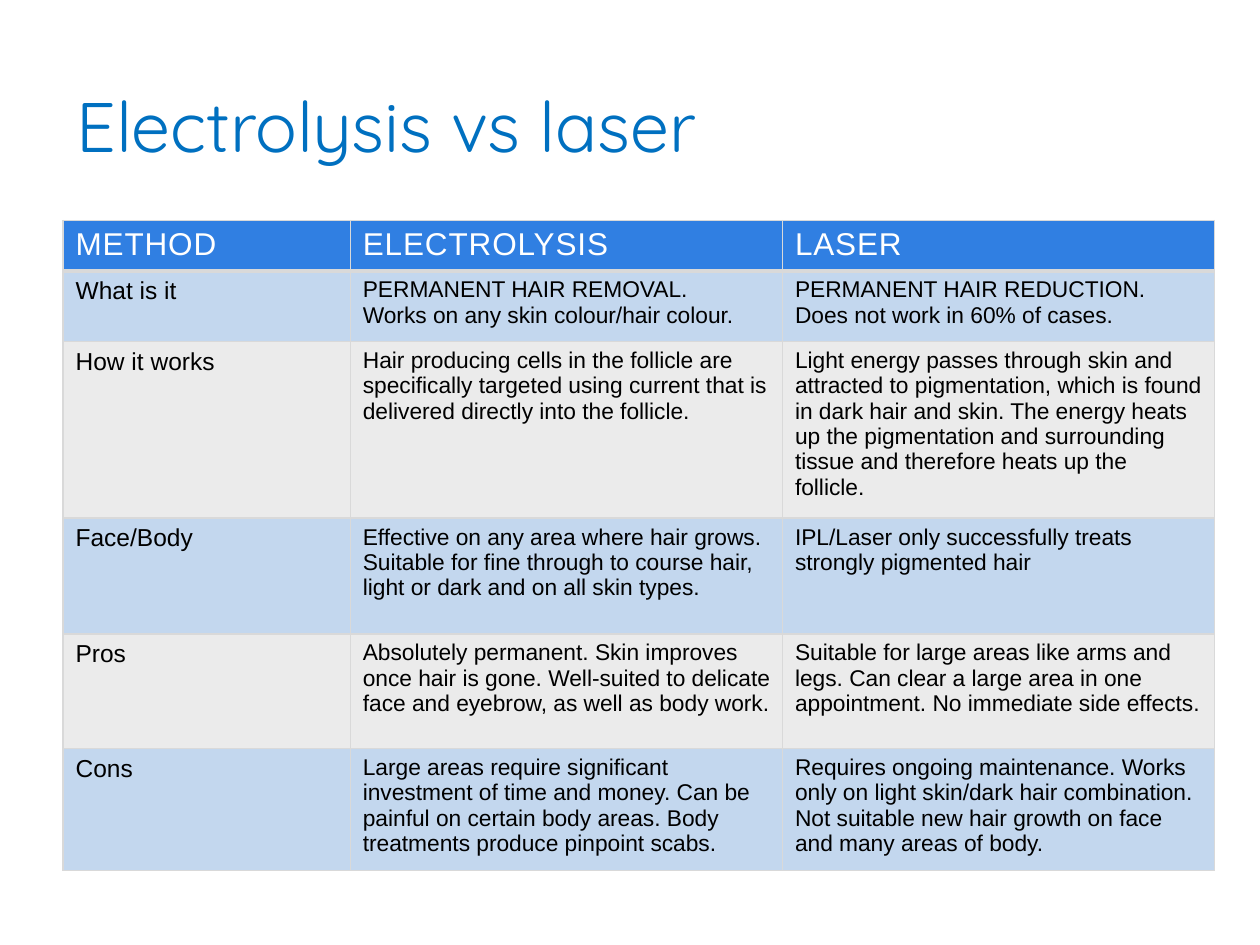
from lxml.etree import SubElement
from pptx import Presentation
from pptx.dml.color import RGBColor as Rgb
from pptx.enum.text import MSO_ANCHOR as Anchor
from pptx.oxml.ns import qn
from pptx.util import Inches, Pt

COLORS = {
    "title": "0070C0",
    "header": "307FE2",
    "odd_row": "C3D7EE",
    "even_row": "EBEBEB",
    "border": "D9D9D9",
    "header_text": "FFFFFF",
    "body_text": "000000",
}
COLUMN_WIDTHS = [2.28, 3.43, 3.43]
ROW_HEIGHTS = [0.37, 0.56, 1.31, 0.92, 0.91, 0.91]
COMPARISON = [
    ("METHOD", "ELECTROLYSIS", "LASER"),
    (
        "What is it",
        "PERMANENT HAIR REMOVAL.\nWorks on any skin colour/hair colour.",
        "PERMANENT HAIR REDUCTION. Does not work in 60% of cases.",
    ),
    (
        "How it works",
        "Hair producing cells in the follicle are specifically targeted using "
        "current that is delivered directly into the follicle.",
        "Light energy passes through skin and attracted to pigmentation, which is "
        "found in dark hair and skin. The energy heats up the pigmentation and "
        "surrounding tissue and therefore heats up the follicle.",
    ),
    (
        "Face/Body",
        "Effective on any area where hair grows. Suitable for fine through to "
        "course hair, light or dark and on all skin types.",
        "IPL/Laser only successfully treats strongly pigmented hair",
    ),
    (
        "Pros",
        "Absolutely permanent. Skin improves once hair is gone. Well-suited to "
        "delicate face and eyebrow, as well as body work.",
        "Suitable for large areas like arms and legs. Can clear a large area in "
        "one appointment. No immediate side effects.",
    ),
    (
        "Cons",
        "Large areas require significant investment of time and money. Can be "
        "painful on certain body areas. Body treatments produce pinpoint scabs.",
        "Requires ongoing maintenance. Works only on light skin/dark hair "
        "combination. Not suitable new hair growth on face and many areas of body.",
    ),
]


def set_font(paragraph, name, size, color):
    paragraph.font.name = name
    paragraph.font.size = Pt(size)
    paragraph.font.bold = False
    paragraph.font.color.rgb = Rgb.from_string(COLORS[color])


def add_title(slide, text):
    box = slide.shapes.add_textbox(
        Inches(0.51), Inches(0.36), Inches(6.61), Inches(1.25)
    )
    frame = box.text_frame
    frame.word_wrap = True
    frame.vertical_anchor = Anchor.MIDDLE
    frame.text = text
    set_font(frame.paragraphs[0], "Quicksand", 40, "title")


def set_borders(cell, top, bottom):
    properties = cell._tc.get_or_add_tcPr()
    widths = {"a:lnL": 1, "a:lnR": 1, "a:lnT": top, "a:lnB": bottom}
    for position, (side, width) in enumerate(widths.items()):
        line = SubElement(properties, qn(side), w=str(Pt(width)))
        fill = SubElement(line, qn("a:solidFill"))
        SubElement(fill, qn("a:srgbClr"), val=COLORS["border"])
        properties.insert(position, line)


def style_cell(cell, row, column):
    is_header = row == 0
    band = "header" if is_header else "odd_row" if row % 2 else "even_row"
    cell.fill.solid()
    cell.fill.fore_color.rgb = Rgb.from_string(COLORS[band])
    set_borders(cell, 3 if row == 1 else 1, 3 if is_header else 1)
    size = 18 if is_header else 14 if column == 0 else 13
    color = "header_text" if is_header else "body_text"
    for paragraph in cell.text_frame.paragraphs:
        set_font(paragraph, "Arial", size, color)
        if is_header:
            for run in paragraph.runs:
                run.font._element.set("spc", "50")


def add_comparison(slide):
    table = slide.shapes.add_table(
        len(ROW_HEIGHTS), len(COLUMN_WIDTHS), Inches(0.5), Inches(1.75),
        Inches(sum(COLUMN_WIDTHS)), Inches(sum(ROW_HEIGHTS)),
    ).table
    for column, width in zip(table.columns, COLUMN_WIDTHS):
        column.width = Inches(width)
    for row, height in zip(table.rows, ROW_HEIGHTS):
        row.height = Inches(height)
    for row, texts in enumerate(COMPARISON):
        for column, text in enumerate(texts):
            cell = table.cell(row, column)
            cell.text = text
            style_cell(cell, row, column)


def main():
    deck = Presentation()
    deck.slide_width, deck.slide_height = Inches(10), Inches(7.5)
    slide = deck.slides.add_slide(deck.slide_layouts[6])
    add_title(slide, "Electrolysis vs laser")
    add_comparison(slide)
    deck.save("out.pptx")


if __name__ == "__main__":
    main()
